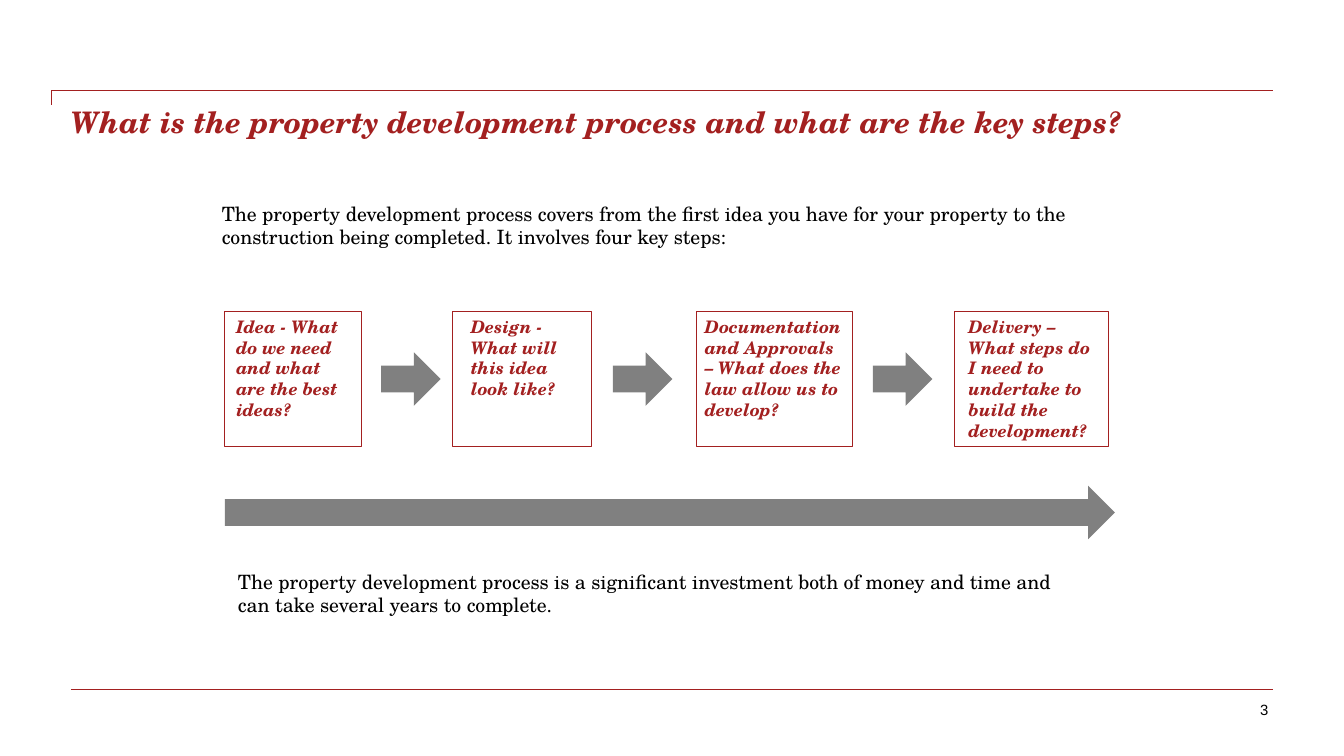
from dataclasses import dataclass

from lxml.etree import SubElement
from pptx import Presentation
from pptx.dml.color import RGBColor
from pptx.enum.shapes import MSO_CONNECTOR, MSO_SHAPE
from pptx.enum.text import MSO_ANCHOR, PP_ALIGN
from pptx.oxml.ns import qn
from pptx.util import Pt


@dataclass(frozen=True)
class Theme:
    red: RGBColor = RGBColor(0xA3, 0x20, 0x20)
    gray: RGBColor = RGBColor(0x80, 0x80, 0x80)
    black: RGBColor = RGBColor(0, 0, 0)
    serif: str = "TeX Gyre Schola"
    sans: str = "Arial"
    title: float = 21.2
    body: float = 14.1
    step: float = 12.3
    number: float = 10.6


THEME = Theme()
STEP_TOP, STEP_HEIGHT = 222.5, 96.5
ARROW_WIDTH, ARROW_HEIGHT = 42.5, 38.2
STEPS = [
    (160, 98, 8.6, 5, "Idea - What do we need and what are the best ideas?"),
    (323.3, 99.4, 13, 4.3, "Design - What will this idea look like?"),
    (497.5, 111.6, 5.8, 6, "Documentation and Approvals – What does the law allow us to develop?"),
    (681.8, 110.2, 10, 7.2, "Delivery – What steps do I need to undertake to build the development?"),
]
ARROW_LEFTS = [272.2, 437.8, 623.5]


def write_text(s, text, size=THEME.body, color=THEME.black, font=THEME.serif, strong=False,
               align=PP_ALIGN.LEFT, anchor=MSO_ANCHOR.TOP, margins=(0, 0, 0, 0), after=0):
    tf = s.text_frame
    tf.word_wrap = True
    tf.vertical_anchor = anchor
    tf.margin_left, tf.margin_top, tf.margin_right, tf.margin_bottom = map(Pt, margins)
    p = tf.paragraphs[0]
    p.alignment = align
    p.space_after = Pt(after)
    r = p.add_run()
    r.text = text
    r.font.name = font
    r.font.size = Pt(size)
    r.font.color.rgb = color
    r.font.bold = r.font.italic = strong


def add_text(slide, left, top, width, height, text, **kwargs):
    s = slide.shapes.add_textbox(Pt(left), Pt(top), Pt(width), Pt(height))
    write_text(s, text, **kwargs)


def add_step(slide, left, width, margin_left, margin_right, text):
    s = slide.shapes.add_shape(MSO_SHAPE.RECTANGLE, Pt(left), Pt(STEP_TOP), Pt(width), Pt(STEP_HEIGHT))
    s.shadow.inherit = False
    s.fill.background()
    s.line.color.rgb = THEME.red
    s.line.width = Pt(0.5)
    write_text(s, text, size=THEME.step, color=THEME.red, strong=True,
               margins=(margin_left, 3.6, margin_right, 0))


def add_arrow(slide, left, top, width=ARROW_WIDTH):
    s = slide.shapes.add_shape(MSO_SHAPE.RIGHT_ARROW, Pt(left), Pt(top), Pt(width), Pt(ARROW_HEIGHT))
    s.shadow.inherit = False
    s.fill.solid()
    s.fill.fore_color.rgb = THEME.gray
    s.line.fill.background()


def add_rule(slide, kind, x1, y1, x2, y2):
    s = slide.shapes.add_connector(kind, Pt(x1), Pt(y1), Pt(x2), Pt(y2))
    s.line.color.rgb = THEME.red
    s.line.width = Pt(0.75)
    SubElement(s._element.spPr, qn("a:effectLst"))
    if kind == MSO_CONNECTOR.ELBOW:
        guides = s._element.spPr.find(qn("a:prstGeom")).find(qn("a:avLst"))
        SubElement(guides, qn("a:gd"), name="adj1", fmla="val 0")


def main():
    prs = Presentation()
    prs.slide_width, prs.slide_height = Pt(960), Pt(540)
    slide = prs.slides.add_slide(prs.slide_layouts[6])

    add_rule(slide, MSO_CONNECTOR.ELBOW, 36.5, 75, 909.4, 64.8)
    add_rule(slide, MSO_CONNECTOR.STRAIGHT, 50.6, 492.3, 909.4, 492.3)
    add_text(slide, 50.6, 74.2, 858.8, 58.3,
             "What is the property development process and what are the key steps?",
             size=THEME.title, color=THEME.red, strong=True)
    add_text(slide, 158.4, 144, 605.5, 31,
             "The property development process covers from the first idea you have for your "
             "property to the construction being completed. It involves four key steps:", after=5.3)

    for step in STEPS:
        add_step(slide, *step)
    for left in ARROW_LEFTS:
        add_arrow(slide, left, STEP_TOP + (STEP_HEIGHT - ARROW_HEIGHT) / 2)
    add_arrow(slide, 160.6, 347, width=635.8)

    add_text(slide, 170, 406.8, 605.5, 31,
             "The property development process is a significant investment both of money and "
             "time and can take several years to complete.", after=5.3)
    add_text(slide, 651, 494.6, 262, 25.2, "3", size=THEME.number, font=THEME.sans,
             align=PP_ALIGN.RIGHT, anchor=MSO_ANCHOR.MIDDLE, margins=(7.2, 3.6, 7.2, 3.6))
    prs.save("out.pptx")


if __name__ == "__main__":
    main()
